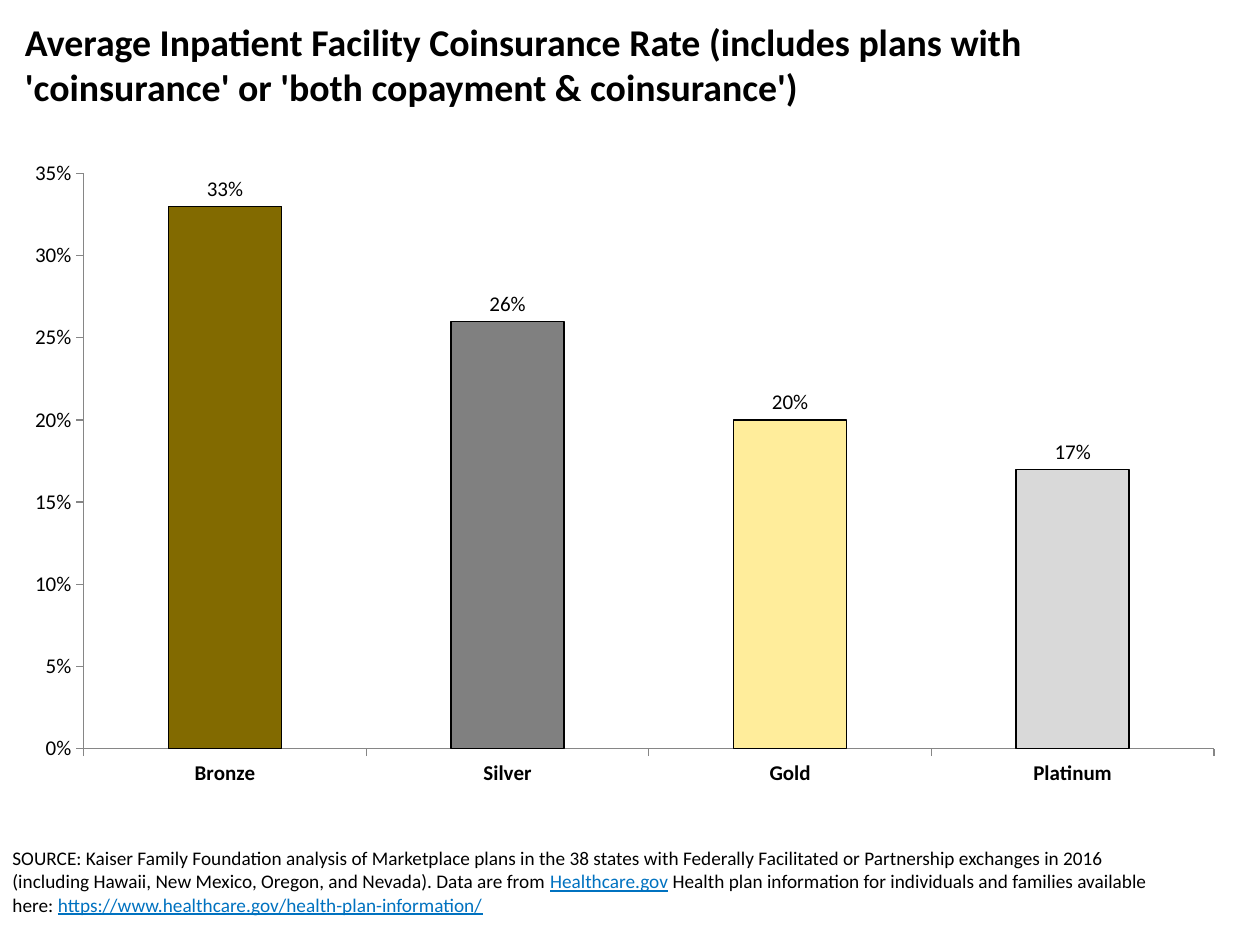
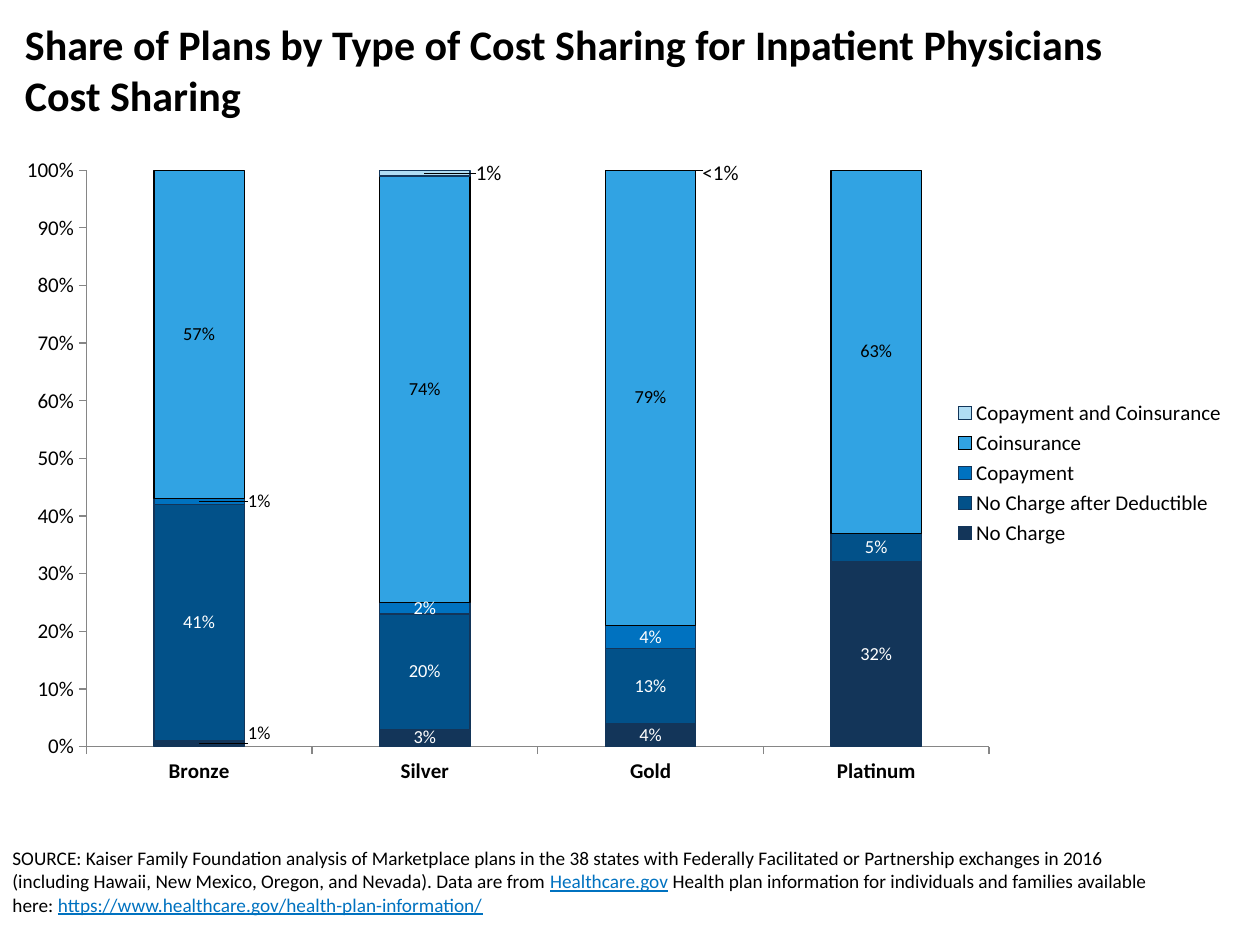
from lxml import etree
from pptx import Presentation
from pptx.chart.data import CategoryChartData
from pptx.dml.color import RGBColor
from pptx.enum.chart import XL_CHART_TYPE as ChartType
from pptx.enum.chart import XL_LABEL_POSITION as LabelPosition
from pptx.enum.chart import XL_LEGEND_POSITION as LegendPosition
from pptx.enum.chart import XL_TICK_MARK as TickMark
from pptx.oxml.ns import qn
from pptx.util import Emu, Pt

EMU_PER_PX = 9144
FONT = "Calibri"
PERCENT = "0%"
BLACK = RGBColor(0x00, 0x00, 0x00)
WHITE = RGBColor(0xFF, 0xFF, 0xFF)
AXIS_GRAY = RGBColor(0x86, 0x86, 0x86)
NAVY = RGBColor(0x13, 0x35, 0x59)
DEEP_BLUE = RGBColor(0x02, 0x51, 0x89)
BLUE = RGBColor(0x00, 0x72, 0xC0)
SKY = RGBColor(0x31, 0xA3, 0xE3)
PALE_BLUE = RGBColor(0xB0, 0xDD, 0xF4)
BRONZE = RGBColor(0x82, 0x6A, 0x00)
SILVER = RGBColor(0x80, 0x80, 0x80)
GOLD = RGBColor(0xFF, 0xED, 0x9B)
PLATINUM = RGBColor(0xD9, 0xD9, 0xD9)

TITLE_BOX = (10, 10, 980, 100)
CHART_BOX = (8, 117, 975, 517)
SOURCE_BOX = (0, 667, 925, 84)

METALS = ["Bronze", "Silver", "Gold", "Platinum"]
METAL_COLORS = [BRONZE, SILVER, GOLD, PLATINUM]
COINSURANCE_RATES = [0.33, 0.26, 0.2, 0.17]
COST_SHARING = [
    ("No Charge", [0.01, 0.03, 0.04, 0.32], NAVY, NAVY, WHITE, 10.5),
    ("No Charge after Deductible", [0.41, 0.2, 0.13, 0.05], DEEP_BLUE, NAVY, WHITE, 10.5),
    ("Copayment", [0.01, 0.02, 0.04, 0], BLUE, NAVY, WHITE, 10.5),
    ("Coinsurance", [0.57, 0.74, 0.79, 0.63], SKY, BLACK, BLACK, 10.5),
    ("Copayment and Coinsurance", [None, 0.01, 0, None], PALE_BLUE, NAVY, BLACK, 12),
]
SIDE_LABELS = [
    ("No Charge", 0, 48, -8, None),
    ("Copayment", 0, 48, 0, None),
    ("Copayment and Coinsurance", 1, 51, 0, None),
    ("Copayment and Coinsurance", 2, 56, 2, "<1%"),
]
SOURCE_RUNS = [
    ("SOURCE: Kaiser Family Foundation analysis of Marketplace plans in the 38 states "
     "with Federally Facilitated or Partnership exchanges in 2016 (including Hawaii, "
     "New Mexico, Oregon, and Nevada). Data are from ", False),
    ("Healthcare.gov", True),
    (" Health plan information for individuals and families available here: ", False),
    ("https://www.healthcare.gov/health-plan-information/", True),
]


def px(length):
    return Emu(length * EMU_PER_PX)


def place(box):
    return [px(length) for length in box]


def style_font(font, size, color=BLACK, bold=False):
    font.name = FONT
    font.size = Pt(size)
    font.bold = bold
    font.color.rgb = color


def add_text_box(slide, box):
    text_frame = slide.shapes.add_textbox(*place(box)).text_frame
    text_frame.word_wrap = True
    return text_frame.paragraphs[0]


def add_title(slide, box, text, size):
    paragraph = add_text_box(slide, box)
    paragraph.text = text
    style_font(paragraph.font, size, bold=True)


def add_source(slide, box):
    paragraph = add_text_box(slide, box)
    style_font(paragraph.font, 11)
    for text, is_address in SOURCE_RUNS:
        run = paragraph.add_run()
        run.text = text
        if is_address:
            run.font.color.rgb = BLUE
            run.font.underline = True


def add_layout(parent, index, **values):
    layout = etree.Element(qn("c:layout"))
    manual = etree.SubElement(layout, qn("c:manualLayout"))
    for name, value in values.items():
        etree.SubElement(manual, qn(f"c:{name}")).set("val", str(value))
    for old_layout in parent.findall(qn("c:layout")):
        parent.remove(old_layout)
    parent.insert(index, layout)


def add_column_chart(slide, box, chart_type, series_values, maximum, step, plot_area):
    data = CategoryChartData(number_format=PERCENT)
    data.categories = METALS
    for name, values in series_values:
        data.add_series(name, values)
    chart = slide.shapes.add_chart(chart_type, *place(box), data).chart
    chart.has_title = False
    chart.has_legend = False
    style_font(chart.font, 12)
    plot = chart.plots[0]
    plot.gap_width = 150
    plot.vary_by_categories = False
    for axis in (chart.category_axis, chart.value_axis):
        axis.has_major_gridlines = False
        axis.major_tick_mark = TickMark.OUTSIDE
        axis.minor_tick_mark = TickMark.NONE
        axis.format.line.color.rgb = AXIS_GRAY
        axis.format.line.width = Pt(0.75)
        style_font(axis.tick_labels.font, 12, bold=axis is chart.category_axis)
    value_axis = chart.value_axis
    value_axis.minimum_scale = 0
    value_axis.maximum_scale = maximum
    value_axis.major_unit = step
    value_axis.tick_labels.number_format = PERCENT
    value_axis.tick_labels.number_format_is_linked = False
    style_font(value_axis.tick_labels.font, 12)
    style_font(chart.category_axis.tick_labels.font, 12, bold=True)
    x, y, width, height = plot_area
    add_layout(plot._element.getparent(), 0, layoutTarget="inner", xMode="edge",
               yMode="edge", x=x, y=y, w=width, h=height)
    return chart


def style_column(column, fill_color, line_color):
    column.format.fill.solid()
    column.format.fill.fore_color.rgb = fill_color
    column.format.line.color.rgb = line_color
    column.format.line.width = Pt(0.75)


def show_values(series, size, color, position):
    labels = series.data_labels
    labels.show_value = True
    labels.number_format = PERCENT
    labels.number_format_is_linked = False
    labels.position = position
    style_font(labels.font, size, color)


def label_element(series, index):
    return series._element.xpath(f'c:dLbls/c:dLbl[c:idx/@val="{index}"]')[0]


def move_label(series, index, size, right, down, text):
    label = series.points[index].data_label
    if text:
        paragraph = label.text_frame.paragraphs[0]
        paragraph.text = text
        style_font(paragraph.font, size)
    else:
        style_font(label.font, size)
    add_layout(label_element(series, index), 1,
               x=round(right / CHART_BOX[2], 3), y=round(down / CHART_BOX[3], 3))


def hide_label(series, index):
    series.points[index].data_label.font.size = Pt(10.5)
    label_element(series, index).find(qn("c:showVal")).set("val", "0")


def add_rate_chart(slide, box):
    chart = add_column_chart(slide, box, ChartType.COLUMN_CLUSTERED,
                             [("Series 1", COINSURANCE_RATES)], 0.35, 0.05,
                             (0.06, 0.04, 0.92, 0.883))
    series = chart.plots[0].series[0]
    style_column(series, NAVY, BLACK)
    for index, color in enumerate(METAL_COLORS):
        style_column(series.points[index], color, BLACK)
    show_values(series, 12, BLACK, LabelPosition.OUTSIDE_END)


def add_share_chart(slide, box):
    chart = add_column_chart(slide, box, ChartType.COLUMN_STACKED_100,
                             [row[:2] for row in COST_SHARING], 1, 0.1,
                             (0.062, 0.035, 0.735, 0.885))
    chart.plots[0].overlap = 100
    chart.has_legend = True
    chart.legend.position = LegendPosition.RIGHT
    chart.legend.include_in_layout = False
    style_font(chart.legend.font, 12)
    series_by_name = {series.name: series for series in chart.plots[0].series}
    label_sizes = {}
    for name, _, fill_color, line_color, label_color, size in COST_SHARING:
        style_column(series_by_name[name], fill_color, line_color)
        show_values(series_by_name[name], size, label_color, LabelPosition.CENTER)
        label_sizes[name] = size
    for name, index, right, down, text in SIDE_LABELS:
        move_label(series_by_name[name], index, label_sizes[name], right, down, text)
    hide_label(series_by_name["Copayment"], METALS.index("Platinum"))


def add_chart_slide(presentation, title, title_size, add_chart):
    slide = presentation.slides.add_slide(presentation.slide_layouts[6])
    add_source(slide, SOURCE_BOX)
    add_title(slide, TITLE_BOX, title, title_size)
    add_chart(slide, CHART_BOX)


def main():
    presentation = Presentation()
    presentation.slide_width = px(1000)
    presentation.slide_height = px(750)
    add_chart_slide(
        presentation,
        "Average Inpatient Facility Coinsurance Rate (includes plans with "
        "'coinsurance' or 'both copayment & coinsurance')",
        21.6, add_rate_chart)
    add_chart_slide(
        presentation,
        "Share of Plans by Type of Cost Sharing for Inpatient Physicians\vCost Sharing",
        24, add_share_chart)
    presentation.save("out.pptx")


if __name__ == "__main__":
    main()
